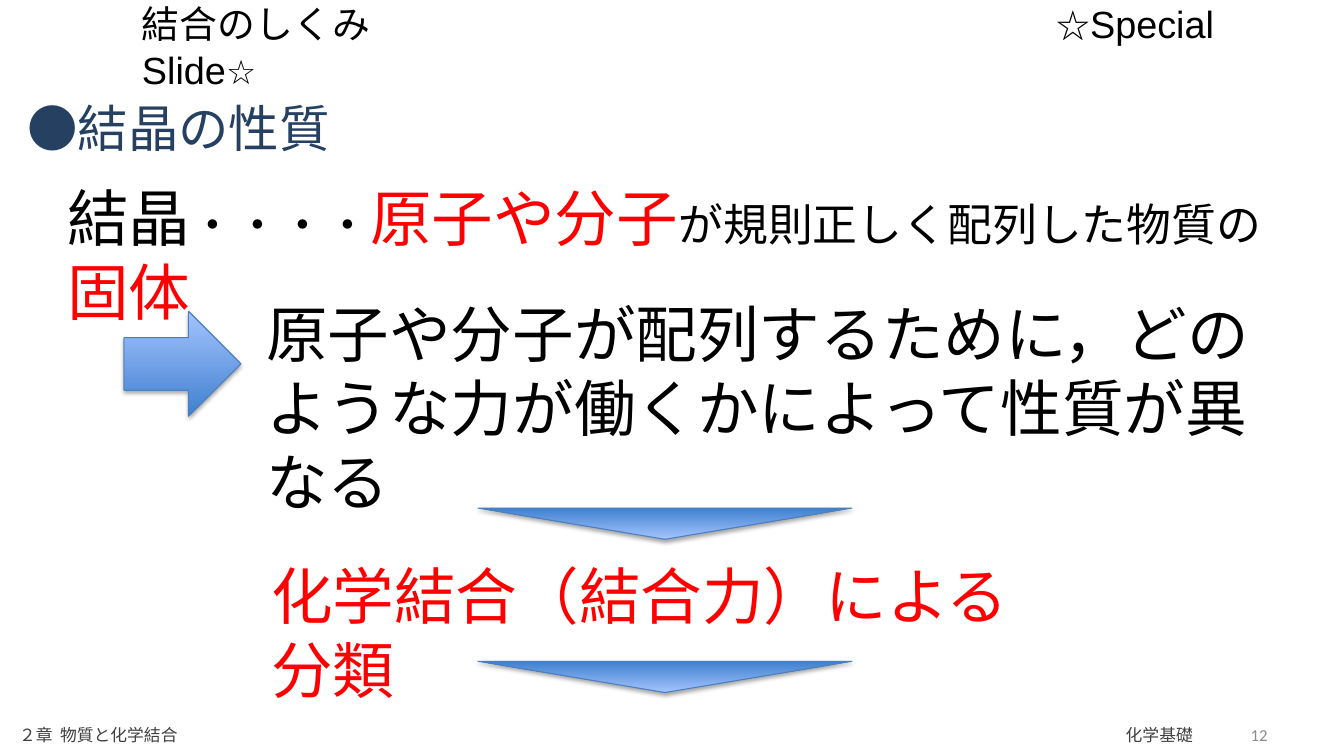
from lxml import etree
from pptx import Presentation
from pptx.dml.color import RGBColor
from pptx.enum.shapes import MSO_SHAPE
from pptx.enum.text import MSO_ANCHOR, PP_ALIGN
from pptx.oxml.ns import qn
from pptx.util import Inches, Pt

LEFT, RIGHT = PP_ALIGN.LEFT, PP_ALIGN.RIGHT
TOP, MIDDLE = MSO_ANCHOR.TOP, MSO_ANCHOR.MIDDLE
RIGHT_ARROW, TRIANGLE = MSO_SHAPE.RIGHT_ARROW, MSO_SHAPE.ISOSCELES_TRIANGLE
BLACK, RED, NAVY, DARK, GRAY = "000000", "FF0000", "254061", "404040", "8C8C8C"
DEEP_BLUE, PALE_BLUE, EDGE_BLUE = "3F80CE", "A4C4FF", "4B7EBC"
TITLE_ONLY = 5


def color(value):
    return RGBColor.from_string(value)


def fill_text(shape, runs, align=LEFT, anchor=TOP, wrap=True, tab=None):
    frame = shape.text_frame
    for name, value in {"word_wrap": wrap, "vertical_anchor": anchor}.items():
        setattr(frame, name, value)
    paragraph = frame.paragraphs[0]
    paragraph.alignment = align
    if tab is not None:
        tabs = etree.SubElement(paragraph._p.get_or_add_pPr(), qn("a:tabLst"))
        etree.SubElement(tabs, qn("a:tab"), pos=str(Inches(tab)), algn="l")
    for text, size, shade, *font_name in runs:
        run = paragraph.add_run()
        run.text = text
        formats = {"name": font_name[0] if font_name else "Calibri", "size": Pt(size)}
        for name, value in formats.items():
            setattr(run.font, name, value)
        run.font.color.rgb = color(shade)


def add_text(slide, box, runs, **options):
    shape = slide.shapes.add_textbox(*map(Inches, box))
    fill_text(shape, runs, **options)


def add_gradient_shape(slide, kind, box, rotation=0):
    shape = slide.shapes.add_shape(kind, *map(Inches, box))
    shape.rotation = rotation
    shape.fill.gradient()
    shape.fill.gradient_angle = 90
    for stop, shade in zip(shape.fill.gradient_stops, (DEEP_BLUE, PALE_BLUE)):
        stop.color.rgb = color(shade)
    shape.line.color.rgb = color(EDGE_BLUE)
    shape.line.width = Pt(0.75)
    shape.shadow.inherit = False
    effects = shape._element.spPr.find(qn("a:effectLst"))
    shadow = etree.SubElement(effects, qn("a:outerShdw"), blurRad=str(Pt(3.1)),
                              dist=str(Pt(1.8)), dir="5400000", rotWithShape="0")
    shade = etree.SubElement(shadow, qn("a:srgbClr"), val=BLACK)
    etree.SubElement(shade, qn("a:alpha"), val="35000")


def add_header(slide, box):
    runs = [("結合のしくみ\t", 27, BLACK), ("☆", 24, BLACK),
            ("Special", 27, BLACK, "Arial"), (" ", 16, BLACK, "Arial"),
            ("Slide", 27, BLACK, "Arial"), ("☆", 24, BLACK)]
    add_text(slide, box, runs, anchor=MIDDLE, tab=9.07)


def add_footer(slide, box):
    left, top, width, height = box
    add_text(slide, (left, top, 4.69, height), [("２章  物質と化学結合", 12, DARK)])
    add_text(slide, (left + width - 3.11, top, 2.37, height),
             [("化学基礎", 12, DARK)], align=RIGHT)
    add_text(slide, (left + width - 3.11, top, 3.11, height),
             [("12", 12, GRAY)], align=RIGHT, anchor=MIDDLE)


def place_title(slide, box):
    title = slide.shapes.title
    for name, value in zip(("left", "top", "width", "height"), box):
        setattr(title, name, Inches(value))
    fill_text(title, [("●結晶の性質", 36, NAVY)], wrap=False)


def add_definition(slide, box):
    add_text(slide, box, [
        ("結晶", 44, BLACK), ("・・・・", 32, BLACK), ("原子や分子", 44, RED),
        ("が規則正しく配列した物質の", 32, BLACK), ("固体", 44, RED)])


def add_reasoning(slide, box):
    left, top, width, height = box
    add_gradient_shape(slide, RIGHT_ARROW, (left, top + 0.2, 1.16, 1.04))
    add_text(slide, (left + 1.31, top, width - 1.31, 1.58),
             [("原子や分子が配列するために，どのような力が働くかによって性質が異なる", 44, BLACK)])
    add_text(slide, (left + 1.36, top + 2.6, 8.02, 0.84),
             [("化学結合（結合力）による分類", 44, RED)])
    for row in range(2):
        add_gradient_shape(slide, TRIANGLE,
                           (left + 3.51, top + 2.15 + row * 1.52, 3.71, 0.31), 180)


def main():
    presentation = Presentation()
    presentation.slide_width, presentation.slide_height = Inches(13.33), Inches(7.5)
    slide = presentation.slides.add_slide(presentation.slide_layouts[TITLE_ONLY])
    add_header(slide, (1.31, 0.18, 11.46, 0.56))
    add_footer(slide, (0.09, 7.14, 12.58, 0.3))
    place_title(slide, (0.17, 0.91, 3.23, 0.71))
    add_definition(slide, (0.57, 1.74, 12.06, 0.84))
    add_reasoning(slide, (1.23, 2.89, 11.52, 3.98))
    presentation.save("out.pptx")


if __name__ == "__main__":
    main()
